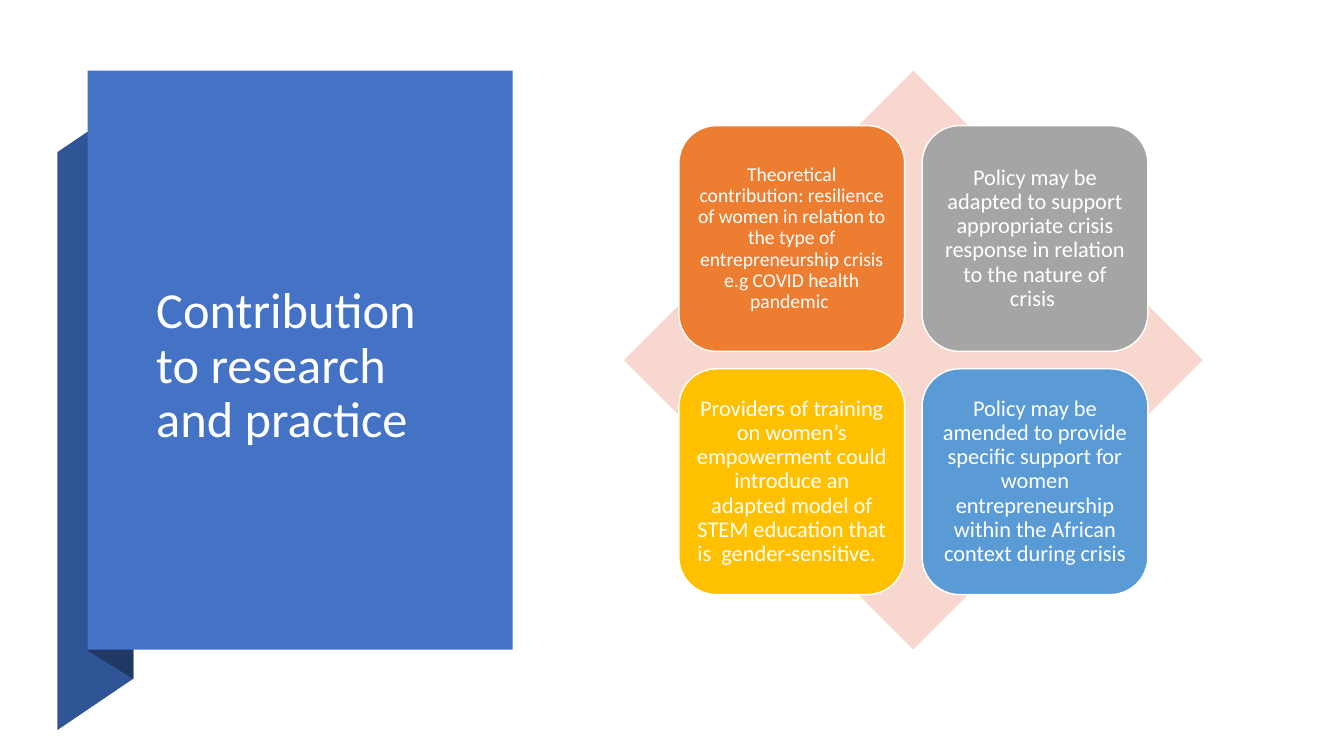
from dataclasses import dataclass

from pptx import Presentation
from pptx.dml.color import RGBColor
from pptx.enum.shapes import MSO_SHAPE
from pptx.enum.text import MSO_ANCHOR, MSO_AUTO_SIZE, PP_ALIGN
from pptx.util import Pt


@dataclass(frozen=True)
class Theme:
    """Colours, font and type sizes of the deck."""
    font: str = "Calibri"
    white: str = "FFFFFF"
    panel: str = "4472C4"
    ribbon: str = "2F5597"
    fold: str = "203864"
    diamond: str = "F8D7CE"
    orange: str = "ED7D31"
    grey: str = "A5A5A5"
    gold: str = "FFC000"
    blue: str = "5B9BD5"
    title_size: int = 36
    body_size: int = 16
    small_size: int = 14


class SlideBuilder:
    """Draws themed elements on the current slide, with lengths in points."""

    def __init__(self, slide, theme):
        """Keep the slide and its theme."""
        self.s, self.theme = slide, theme

    def paint(self, sp, fill, line=None):
        """Give a shape its fill and outline without shadow."""
        sp.shadow.inherit = False
        sp.fill.solid()
        sp.fill.fore_color.rgb = RGBColor.from_string(fill)
        if line:
            sp.line.color.rgb = RGBColor.from_string(line)
            sp.line.width = Pt(1)
        else:
            sp.line.fill.background()

    def outline(self, points, fill):
        """Draw a closed polygon."""
        pts = [(Pt(x), Pt(y)) for x, y in points]
        fb = self.s.shapes.build_freeform(*pts[0], scale=1.0)
        fb.add_line_segments(pts[1:], close=True)
        self.paint(fb.convert_to_shape(), fill)

    def shape(self, kind, box, fill, line=None):
        """Add a preset shape."""
        sp = self.s.shapes.add_shape(kind, *map(Pt, box))
        self.paint(sp, fill, line)
        return sp

    def set_text(self, sp, text, size, align, inset):
        """Fill a text frame with one formatted paragraph."""
        tf = sp.text_frame
        frame = {"word_wrap": True, "auto_size": MSO_AUTO_SIZE.NONE,
                 "vertical_anchor": MSO_ANCHOR.MIDDLE}
        for side in ("left", "top", "right", "bottom"):
            frame[f"margin_{side}"] = Pt(inset[side in ("top", "bottom")])
        p = tf.paragraphs[0]
        r = p.add_run()
        r.text = text
        r.font.color.rgb = RGBColor.from_string(self.theme.white)
        formats = (
            (tf, frame),
            (p, {"alignment": align, "line_spacing": 0.9}),
            (r.font, {"name": self.theme.font, "size": Pt(size)}),
        )
        for target, values in formats:
            for name, value in values.items():
                setattr(target, name, value)

    def title(self, text, box):
        """Place the title placeholder in front of the panel."""
        sp = self.s.shapes.title
        for name, value in zip(("left", "top", "width", "height"), box):
            setattr(sp, name, Pt(value))
        self.set_text(sp, text, self.theme.title_size, PP_ALIGN.LEFT, (7.2, 3.6))
        self.s.shapes.element.append(sp.element)

    def tile(self, text, box, fill, size):
        """Add a rounded tile with centred text."""
        sp = self.shape(MSO_SHAPE.ROUNDED_RECTANGLE, box, fill, self.theme.white)
        inset = size * 0.3
        self.set_text(sp, text, size, PP_ALIGN.CENTER, (inset, inset))


def main():
    """Build the slide and save it."""
    prs = Presentation()
    prs.slide_width, prs.slide_height = Pt(960), Pt(540)
    theme = Theme()
    b = SlideBuilder(prs.slides.add_slide(prs.slide_layouts[5]), theme)

    b.outline([(41, 521.5), (95.3, 484.8), (95.3, 72), (41, 108.7)], theme.ribbon)
    b.outline([(63, 465), (95.3, 485), (95.3, 71), (63, 50.5)], theme.fold)
    b.shape(MSO_SHAPE.RECTANGLE, (62.7, 50.5, 303.6, 413.5), theme.panel)
    b.title("Contribution to research and practice", (104.4, 120.2, 216.7, 283.7))

    left, top, side = 445.7, 50.5, 413.5
    b.shape(MSO_SHAPE.DIAMOND, (left, top, side, side), theme.diamond)
    tile, pitch = 161.3, 173.7
    margin = (side - tile - pitch) / 2
    tiles = (
        ("Theoretical contribution: resilience of women in relation to the type of "
         "entrepreneurship crisis e.g COVID health pandemic ",
         theme.orange, theme.small_size),
        ("Policy may be adapted to support appropriate crisis response in relation "
         "to the nature of crisis ", theme.grey, theme.body_size),
        ("Providers of training on women’s empowerment could introduce an adapted "
         "model of STEM education that is  gender-sensitive.  ",
         theme.gold, theme.body_size),
        ("Policy may be amended to provide specific support for women "
         "entrepreneurship within the African context during crisis",
         theme.blue, theme.body_size),
    )
    for i, (text, fill, size) in enumerate(tiles):
        row, col = divmod(i, 2)
        box = (left + margin + col * pitch, top + margin + row * pitch, tile, tile)
        b.tile(text, box, fill, size)

    prs.save("out.pptx")


if __name__ == "__main__":
    main()
